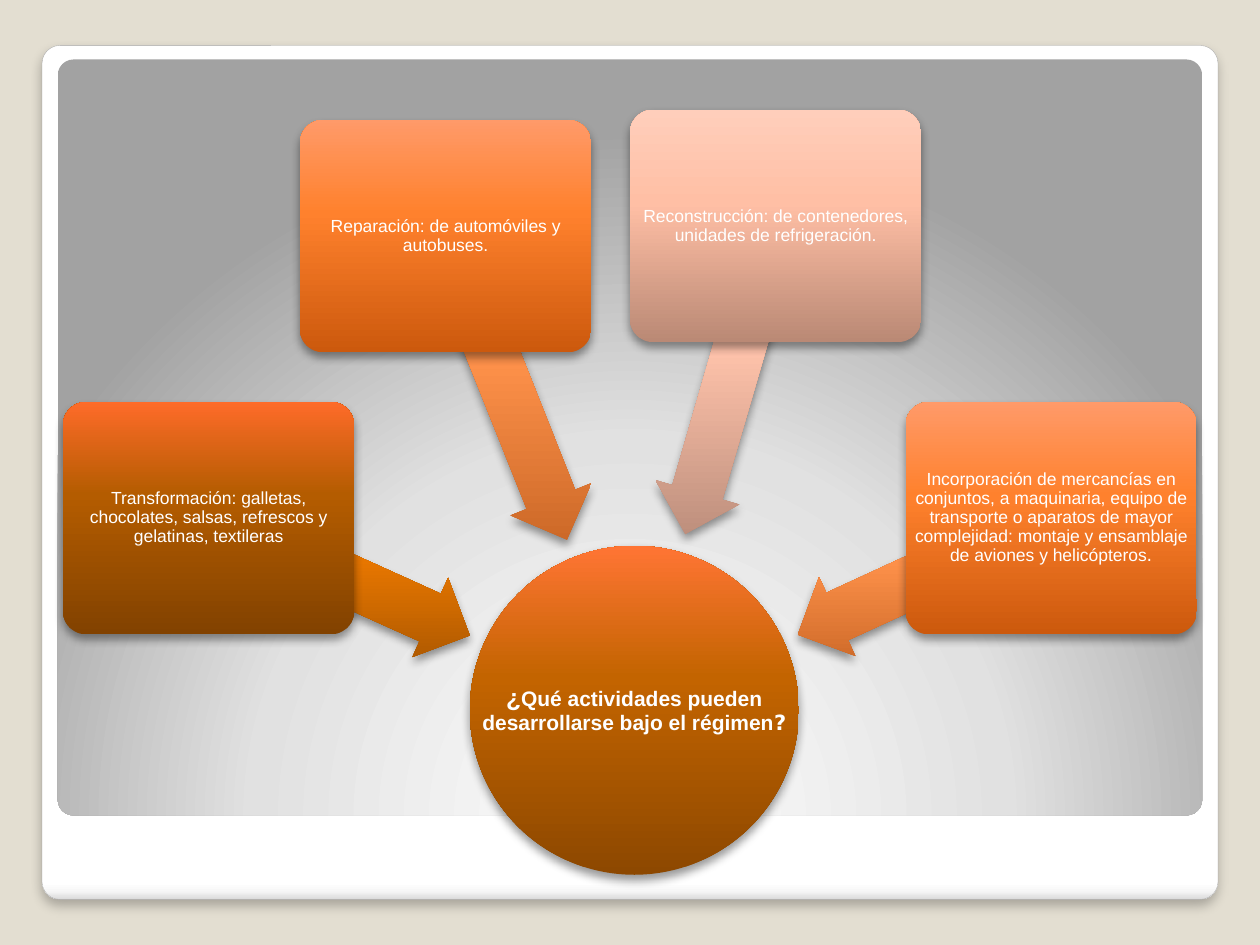
from pptx import Presentation
from pptx.dml.color import RGBColor
from pptx.enum.shapes import MSO_SHAPE as SHAPE
from pptx.enum.text import MSO_ANCHOR as ANCHOR, PP_ALIGN as ALIGN
from pptx.oxml import parse_xml
from pptx.oxml.ns import nsdecls, qn
from pptx.util import Pt

WHITE = "FFFFFF"
UP = '<a:lin ang="16200000" scaled="0"/>'
DOWN = '<a:lin ang="5400000" scaled="0"/>'
GLOW = ('<a:path path="circle"><a:fillToRect l="50000" t="175000" '
        'r="50000" b="-75000"/></a:path>')
SOFT = (5.2, 3, 40)  # shadow blur, distance, opacity

prs = Presentation()
prs.slide_width, prs.slide_height = Pt(720), Pt(540)
s = prs.slides.add_slide(prs.slide_layouts[6])
s.background.fill.solid()
s.background.fill.fore_color.rgb = RGBColor.from_string("E3DED1")


def add_shape(kind, box, stops, direction=UP, shadow=SOFT, adj=(), rotation=0):
    """Add a gradient-filled shape without outline."""
    sp = s.shapes.add_shape(kind, *[Pt(v) for v in box])
    sp.rotation = rotation
    for i, value in enumerate(adj):
        sp.adjustments[i] = value
    sp.line.fill.background()
    sp.shadow.inherit = False
    marks = "".join(f'<a:gs pos="{pos * 1000}"><a:srgbClr val="{c}"/></a:gs>'
                    for pos, c in stops)
    spPr = sp._element.spPr
    spPr.find(qn("a:prstGeom")).addnext(parse_xml(
        f'<a:gradFill {nsdecls("a")} rotWithShape="0">'
        f'<a:gsLst>{marks}</a:gsLst>{direction}</a:gradFill>'))
    if shadow:
        blur, dist, alpha = shadow
        spPr.find(qn("a:effectLst")).append(parse_xml(
            f'<a:outerShdw {nsdecls("a")} blurRad="{Pt(blur)}" dist="{Pt(dist)}" '
            f'dir="5400000" rotWithShape="0"><a:srgbClr val="000000">'
            f'<a:alpha val="{alpha * 1000}"/></a:srgbClr></a:outerShdw>'))
    return sp


def add_label(box, margin, runs, bold=False):
    """Add centred white text; runs are (text, size, font)."""
    tf = s.shapes.add_textbox(*[Pt(v) for v in box]).text_frame
    tf.word_wrap = True
    tf.vertical_anchor = ANCHOR.MIDDLE
    tf.margin_left = tf.margin_right = Pt(margin)
    tf.margin_top = tf.margin_bottom = Pt(1)
    p = tf.paragraphs[0]
    p.alignment = ALIGN.CENTER
    p.line_spacing = 0.9
    p.font.bold = bold
    p.font.color.rgb = RGBColor.from_string(WHITE)
    for text, size, font in runs:
        r = p.add_run()
        r.text = text
        r.font.size = Pt(size)
        r.font.name = font


# Frame and glowing panel
frame = add_shape(SHAPE.ROUNDED_RECTANGLE, (24, 26, 672, 488),
                  [(0, WHITE), (98, WHITE), (99, "F7F7F7"), (100, "DADADA")],
                  DOWN, (6, 4, 25), [0.021])
frame.line.color.rgb = RGBColor.from_string("A4A4A4")
frame.line.width = Pt(0.16)
add_shape(SHAPE.ROUNDED_RECTANGLE, (33, 34, 654, 432),
          [(0, WHITE), (55, "E1E1E1"), (100, "A2A2A2")], GLOW, None, [0.021])

# Central question
circle = (268.5, 311.9, 188, 188)
add_shape(SHAPE.OVAL, circle, [(0, "8D4800"), (60, "C36400"), (100, "FF7534")])
add_label(circle, 1, [("¿", 14, "Arial"),
                      ("Qué actividades pueden desarrollarse bajo el régimen", 12, "Arial"),
                      ("?", 12, "DejaVu Sans")], bold=True)

# Activities: card position and colours, arrow position, turn and colours, text
BROWN = ("824200", "B45C00", "FE6B29"), ("A85600", "E97700", "FF8D53")
ORANGE = ("CC590D", "FF812D", "FF9A69"), ("C96625", "FF924B", "FFA879")
PINK = ("BA8975", "FFBFA5", "FFCEBB"), ("BA8C7A", "FFC3AB", "FFD1C0")
CARD_W, CARD_H, ARROW_H = 166.4, 132.8, 49.7
activities = [
    ((36, 229.7), (112.3, 304.6, 163.4), 204.3, BROWN,
     [("Transformación: galletas, chocolates, salsas, refrescos y "
       "gelatinas, textileras", 10, "Arial")]),
    ((171.4, 68.5), (195.8, 196.6, 187.2), 248.3, ORANGE,
     [("Reparación: de automóviles y autobuses.", 10, "Arial")]),
    ((360, 62.7), (325.4, 192.2, 183.6), 286.2, PINK,
     [("Reconstrucción: de contenedores, unidades de refrigeración.", 10, "Arial")]),
    ((517.5, 229.7), (448.6, 304.6, 159.1), 335.3, ORANGE,
     [("Incorporación de mercancías en conjuntos, a maquinaria, equipo de "
       "transporte o aparatos de mayor complejidad: montaje y ensamblaje de "
       "aviones y helicópteros", 10, "Arial"), (".", 10, "DejaVu Sans")]),
]
for corner, arrow, turn, (card_colors, arrow_colors), runs in activities:
    card = (*corner, CARD_W, CARD_H)
    add_shape(SHAPE.LEFT_ARROW, (*arrow, ARROW_H), zip((0, 60, 100), arrow_colors),
              adj=[0.6, 0.5], rotation=turn)
    add_shape(SHAPE.ROUNDED_RECTANGLE, card, zip((0, 60, 100), card_colors), adj=[0.1])
    add_label(card, 3, runs)

prs.save("out.pptx")
